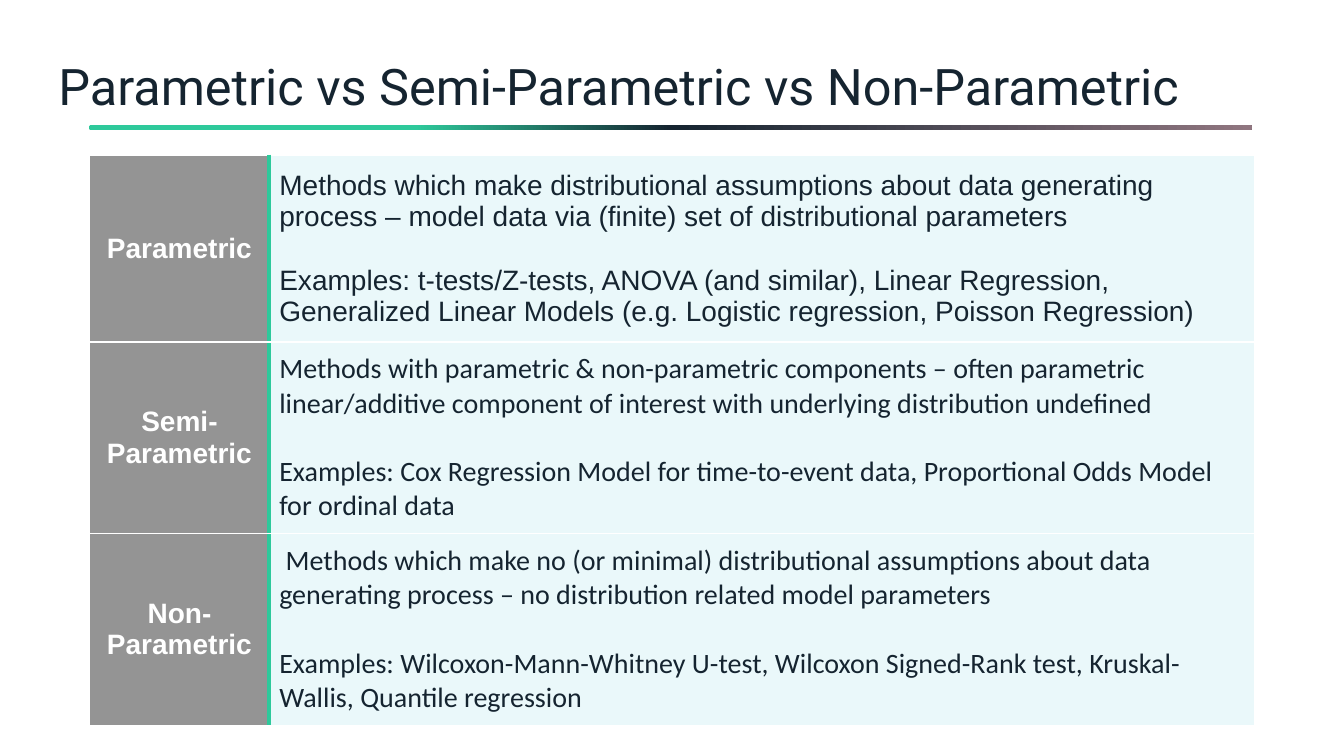
from lxml.etree import SubElement as Sub
from pptx import Presentation
from pptx.dml.color import RGBColor
from pptx.enum.shapes import MSO_SHAPE as Shape
from pptx.enum.text import MSO_ANCHOR as Anchor, PP_ALIGN as Align
from pptx.oxml.ns import qn
from pptx.util import Inches, Pt

TITLE = "Parametric vs Semi-Parametric vs Non-Parametric"
ROWS = [
    ("Parametric", "Arial", 1.75, (
        "Methods which make distributional assumptions about data generating process"
        " – model data via (finite) set of distributional parameters",
        "Examples: t-tests/Z-tests, ANOVA (and similar), Linear Regression, Generalized"
        " Linear Models (e.g. Logistic regression, Poisson Regression)")),
    ("Semi-Parametric", "Calibri", 1.9, (
        "Methods with parametric & non-parametric components – often parametric"
        " linear/additive component of interest with underlying distribution undefined",
        "Examples: Cox Regression Model for time-to-event data, Proportional Odds Model"
        " for ordinal data")),
    ("Non- Parametric", "Calibri", 1.9, (
        " Methods which make no (or minimal) distributional assumptions about data"
        " generating process – no distribution related model parameters",
        "Examples: Wilcoxon-Mann-Whitney U-test, Wilcoxon Signed-Rank test,"
        " Kruskal-Wallis, Quantile regression")),
]
GREEN, INK, WHITE = "2EC99B", "152430", "FFFFFF"
STOPS = [(0, GREEN), (28, GREEN), (50, INK), (100, "907680")]
LEFT, TOP, COLS = 0.89, 1.54, (1.78, 9.77)
GAP = {"Arial": 23, "Calibri": 24.4}


def color(code):
    """Turn a hex string into a colour."""
    return RGBColor.from_string(code)


def write(para, text, font, size, code, bold=False):
    """Add one run to a paragraph."""
    run = para.add_run()
    run.text = text
    run.font.name, run.font.size, run.font.bold = font, Pt(size), bold
    run.font.color.rgb = color(code)


def tint(cell, code):
    """Fill a cell with a half-clear colour."""
    cell.fill.solid()
    cell.fill.fore_color.rgb = color(code)
    tone = next(cell._tc.tcPr.iter(qn("a:srgbClr")))
    Sub(tone, qn("a:alpha")).set("val", "49000")


def edge(cell, sides):
    """Draw cell borders, given in the order L, R, T, B."""
    props = cell._tc.get_or_add_tcPr()
    for spot, (side, code, width) in enumerate(sides):
        line = Sub(props, qn("a:ln" + side), w=str(Pt(width)))
        fill = Sub(line, qn("a:solidFill"))
        Sub(fill, qn("a:srgbClr"), val=code)
        props.insert(spot, line)


def add_title(slide):
    """Add the heading and the gradient rule below it."""
    box = slide.shapes.add_textbox(Inches(0.58), Inches(0.38), Inches(12.16), Inches(0.78))
    frame = box.text_frame
    frame.word_wrap, frame.vertical_anchor = True, Anchor.BOTTOM
    frame.margin_left = frame.margin_right = frame.margin_top = frame.margin_bottom = 0
    frame.paragraphs[0].line_spacing = 0.9
    write(frame.paragraphs[0], TITLE, "Roboto", 36, INK)
    bar = slide.shapes.add_shape(Shape.ROUNDED_RECTANGLE, Inches(0.88), Inches(1.24),
                                 Inches(11.54), Inches(0.05))
    bar.adjustments[0] = 0.5
    bar.shadow.inherit = False
    bar.line.fill.background()
    bar.fill.gradient()
    bar.fill.gradient_angle = 0
    stops = next(bar._element.iter(qn("a:gsLst")))
    for old in list(stops):
        stops.remove(old)
    for share, code in STOPS:
        stop = Sub(stops, qn("a:gs"), pos=str(share * 1000))
        Sub(stop, qn("a:srgbClr"), val=code)


def add_grid(slide):
    """Add the table of method families."""
    high = sum(row[2] for row in ROWS)
    grid = slide.shapes.add_table(len(ROWS), len(COLS), Inches(LEFT), Inches(TOP),
                                  Inches(sum(COLS)), Inches(high)).table
    grid.first_row = grid.horz_banding = False
    for col, width in zip(grid.columns, COLS):
        col.width = Inches(width)
    for num, (label, font, tall, parts) in enumerate(ROWS):
        grid.rows[num].height = Inches(tall)
        head, body = grid.cell(num, 0), grid.cell(num, 1)
        for cell, fill, side in ((head, "262626", "R"), (body, "D6F2F6", "L")):
            cell.vertical_anchor = Anchor.MIDDLE
            cell.margin_left = cell.margin_right = Inches(0.1)
            cell.margin_top = cell.margin_bottom = Inches(0.1)
            tint(cell, fill)
            edge(cell, [(side, GREEN, 3), ("T", WHITE, 1), ("B", WHITE, 1)])
        para = head.text_frame.paragraphs[0]
        para.alignment = Align.CENTER
        write(para, label, "Arial", 20, WHITE, True)
        first, last = body.text_frame.paragraphs[0], body.text_frame.add_paragraph()
        last.space_before = Pt(GAP[font])
        for para, text in zip((first, last), parts):
            write(para, text, font, 20, INK)


def main():
    """Build and save the slide."""
    deck = Presentation()
    deck.slide_width, deck.slide_height = Inches(13.33), Inches(7.5)
    slide = deck.slides.add_slide(deck.slide_layouts[6])
    add_title(slide)
    add_grid(slide)
    deck.save("out.pptx")


if __name__ == "__main__":
    main()
